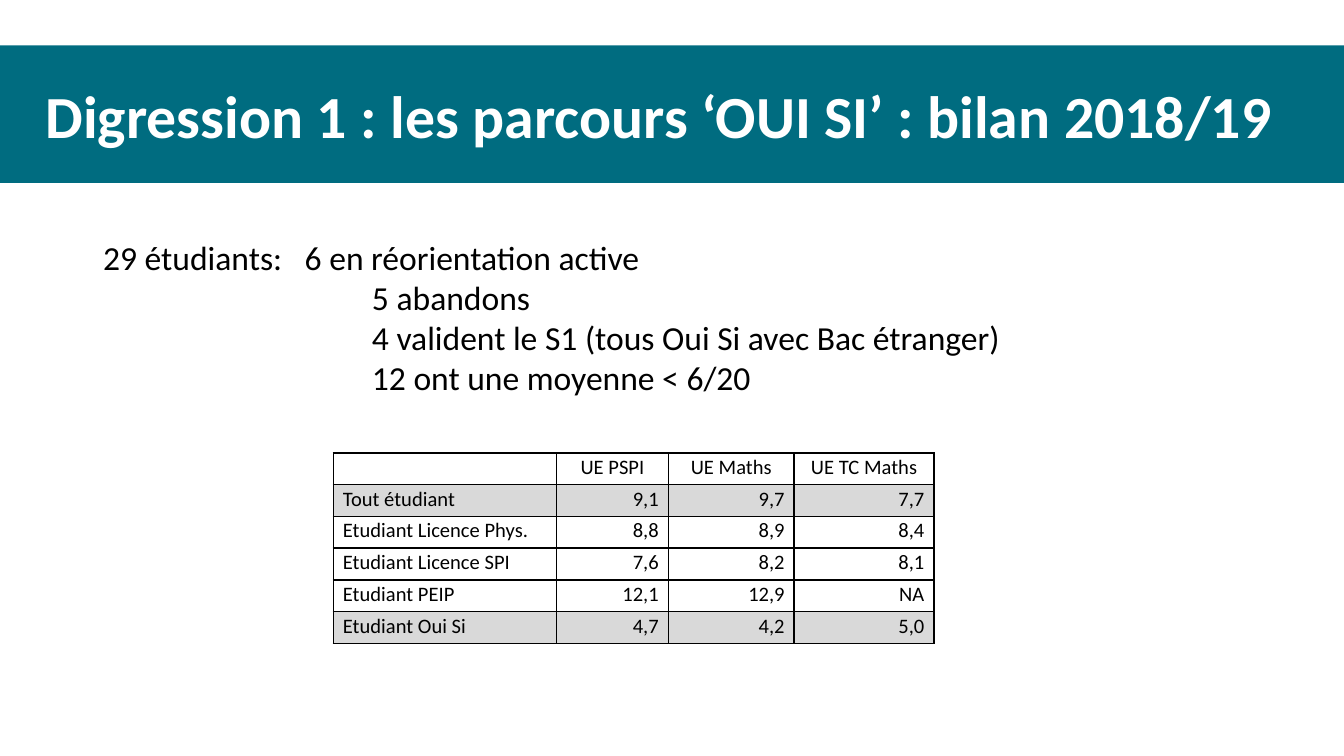
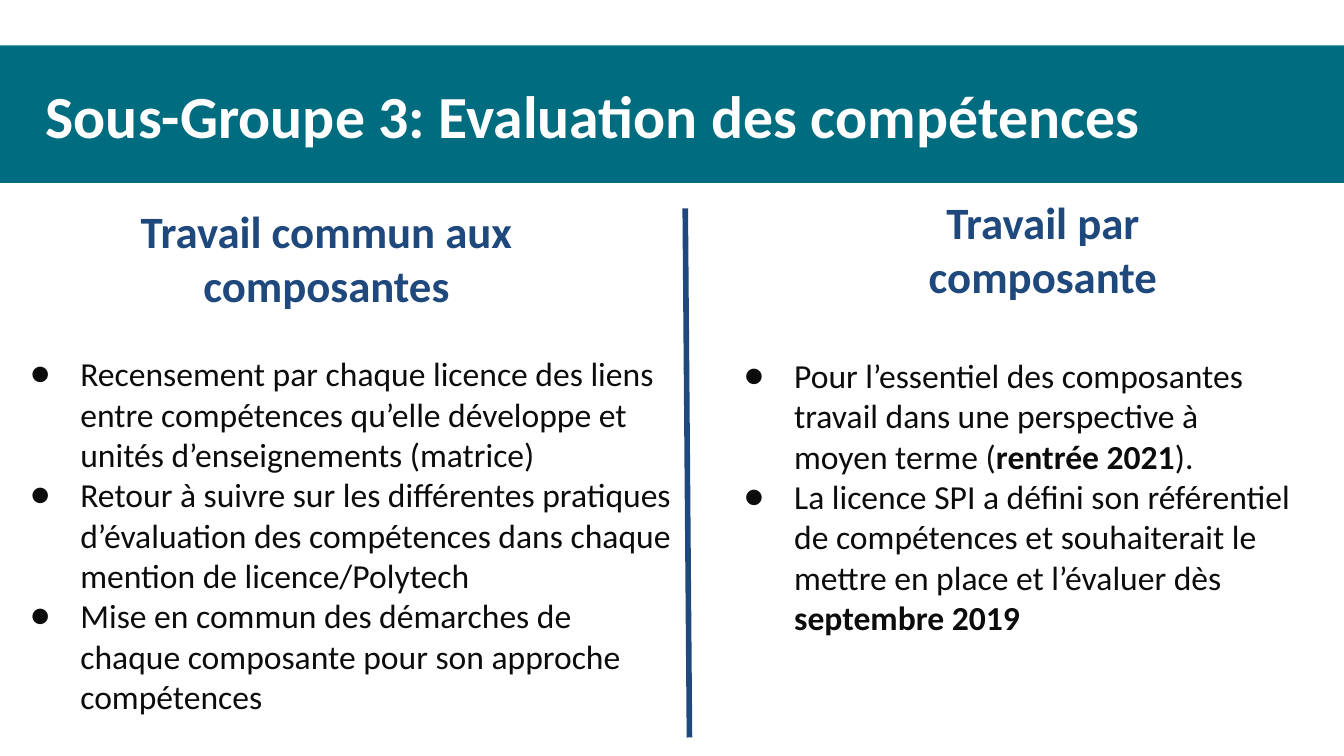
from lxml import etree
from pptx import Presentation
from pptx.dml.color import RGBColor
from pptx.enum.shapes import MSO_CONNECTOR
from pptx.enum.text import MSO_ANCHOR, MSO_AUTO_SIZE, PP_ALIGN
from pptx.oxml.ns import qn
from pptx.util import Cm, Pt

LEFT, CENTER, RIGHT, JUSTIFY = PP_ALIGN.LEFT, PP_ALIGN.CENTER, PP_ALIGN.RIGHT, PP_ALIGN.JUSTIFY
MIDDLE, TOP = MSO_ANCHOR.MIDDLE, MSO_ANCHOR.TOP
NO_AUTOFIT = MSO_AUTO_SIZE.NONE
STRAIGHT = MSO_CONNECTOR.STRAIGHT

FONT = "Calibri"
COLORS = {
    "band": "006C80",
    "white": "FFFFFF",
    "black": "000000",
    "body": "0C0C0C",
    "heading": "1F497D",
    "shade": "D9D9D9",
}
TITLE_ONLY = 5
SLIDE_W, SLIDE_H = 25.4, 14.29


def rgb(name):
    return RGBColor.from_string(COLORS[name])


def add_xml(parent, tag, **attributes):
    return etree.SubElement(parent, qn(tag), **attributes)


def write(paragraph, text, size=18, color="black", bold=False, align=LEFT,
          spacing=None, margin=0, indent=0, bullet=None, tab=None):
    """Fill a paragraph; parts between ** marks are bold."""
    paragraph.alignment = align
    if spacing:
        paragraph.line_spacing = spacing
    properties = paragraph._p.get_or_add_pPr()
    properties.set("marL", str(Cm(margin)))
    properties.set("indent", str(Cm(indent)))
    if bullet:
        add_xml(add_xml(properties, "a:buClr"), "a:srgbClr", val=COLORS[color])
        add_xml(properties, "a:buFont", typeface=FONT)
        add_xml(properties, "a:buChar", char=bullet)
    else:
        add_xml(properties, "a:buNone")
    if tab:
        add_xml(add_xml(properties, "a:tabLst"), "a:tab", pos=str(Cm(tab)), algn="l")
    if not text:
        add_xml(paragraph._p, "a:endParaRPr", sz=str(size * 100))
        return
    for i, part in enumerate(text.split("**")):
        if part:
            run = paragraph.add_run()
            run.text = part
            run.font.name, run.font.size = FONT, Pt(size)
            run.font.bold = bold or i % 2 == 1
            run.font.color.rgb = rgb(color)


def add_text_frame(slide, left, top, width, height, inset=0.13):
    frame = slide.shapes.add_textbox(Cm(left), Cm(top), Cm(width), Cm(height)).text_frame
    frame.word_wrap = True
    frame.vertical_anchor = TOP
    frame.margin_left = frame.margin_right = Cm(0.25)
    frame.margin_top = frame.margin_bottom = Cm(inset)
    return frame


def write_lines(frame, lines, **style):
    for i, line in enumerate(lines):
        paragraph = frame.add_paragraph() if i else frame.paragraphs[0]
        write(paragraph, line, **style)


def add_titled_slide(prs, text):
    slide = prs.slides.add_slide(prs.slide_layouts[TITLE_ONLY])
    # Title band across the slide
    band = slide.shapes.title
    band.left, band.top, band.width, band.height = Cm(0), Cm(0.86), Cm(SLIDE_W), Cm(2.6)
    band.fill.solid()
    band.fill.fore_color.rgb = rgb("band")
    frame = band.text_frame
    frame.auto_size = NO_AUTOFIT
    frame.word_wrap = True
    frame.vertical_anchor = MIDDLE
    write(frame.paragraphs[0], text, size=32, color="white", bold=True,
          align=JUSTIFY, margin=0.61)
    return slide


def add_outcomes(slide, left, top, width, height, label, outcomes):
    frame = add_text_frame(slide, left, top, width, height)
    outcome_left = 5.08
    write(frame.paragraphs[0], f"{label}\t{outcomes[0]}", tab=outcome_left)
    for outcome in outcomes[1:]:
        write(frame.add_paragraph(), outcome, margin=outcome_left)


def format_cell(cell, fill):
    cell.margin_left = cell.margin_right = Cm(0.18)
    cell.margin_top = cell.margin_bottom = 0
    properties = cell._tc.get_or_add_tcPr()
    for side in ("a:lnL", "a:lnR", "a:lnT", "a:lnB"):
        border = add_xml(properties, side, w=str(Pt(1)))
        add_xml(add_xml(border, "a:solidFill"), "a:srgbClr", val=COLORS["black"])
    cell.fill.solid()
    cell.fill.fore_color.rgb = rgb(fill)


def add_grades(slide, left, top, widths, row_height, rows, shaded_rows):
    table = slide.shapes.add_table(
        len(rows), len(widths), Cm(left), Cm(top),
        Cm(sum(widths)), Cm(row_height * len(rows))).table
    table.first_row = table.horz_banding = False
    for column, width in zip(table.columns, widths):
        column.width = Cm(width)
    for r, grades in enumerate(rows):
        table.rows[r].height = Cm(row_height)
        for c, grade in enumerate(grades):
            cell = table.cell(r, c)
            format_cell(cell, "shade" if r in shaded_rows else "white")
            align = CENTER if r == 0 else RIGHT if c else LEFT
            write(cell.text_frame.paragraphs[0], grade, size=11, align=align, spacing=1.07)


def add_work_column(slide, left, top, width, height, heading, heading_left,
                    heading_width, tasks_top, tasks):
    # Heading
    frame = add_text_frame(slide, left + heading_left, top, heading_width, 2.74, inset=0.25)
    write(frame.paragraphs[0], heading, size=24, color="heading", bold=True, align=CENTER)
    # Bulleted tasks
    frame = add_text_frame(slide, left, top + tasks_top, width, height - tasks_top)
    write_lines(frame, tasks, color="body", margin=1.27, indent=-0.95, bullet="●")


def add_divider(slide, x1, y1, x2, y2):
    divider = slide.shapes.add_connector(STRAIGHT, Cm(x1), Cm(y1), Cm(x2), Cm(y2))
    divider.line.color.rgb = rgb("heading")
    divider.line.width = Pt(3)
    add_xml(divider._element.spPr, "a:effectLst")


def build_results(prs):
    slide = add_titled_slide(prs, "Digression 1 : les parcours ‘OUI SI’ : bilan 2018/19")
    add_outcomes(slide, 1.7, 4.34, 17.65, 3.33, "29 étudiants:", [
        "6 en réorientation active",
        "5 abandons",
        "4 valident le S1 (tous Oui Si avec Bac étranger)",
        "12 ont une moyenne < 6/20",
    ])
    add_grades(slide, 6.3, 8.56, [4.22, 2.11, 2.38, 2.64], 0.6, [
        ["", "UE PSPI", "UE Maths", "UE TC Maths"],
        ["Tout étudiant", "9,1", "9,7", "7,7"],
        ["Etudiant Licence Phys.", "8,8", "8,9", "8,4"],
        ["Etudiant Licence SPI", "7,6", "8,2", "8,1"],
        ["Etudiant PEIP", "12,1", "12,9", "NA"],
        ["Etudiant Oui Si", "4,7", "4,2", "5,0"],
    ], shaded_rows=(1, 5))


def build_skills(prs):
    slide = add_titled_slide(prs, "Sous-Groupe 3: Evaluation des compétences")
    add_work_column(
        slide, 0, 3.6, 12.95, 10.34, "Travail commun aux composantes",
        heading_left=2.18, heading_width=7.98, tasks_top=2.95, tasks=[
            "Recensement par chaque licence des liens entre compétences qu’elle "
            "développe et unités d’enseignements (matrice)",
            "Retour à suivre sur les différentes pratiques d’évaluation des "
            "compétences dans chaque mention de licence/Polytech",
            "Mise en commun des démarches de chaque composante pour son approche "
            "compétences",
        ])
    add_work_column(
        slide, 13.49, 3.43, 11.3, 9.91, "Travail par composante",
        heading_left=3.02, heading_width=6.4, tasks_top=3.15, tasks=[
            "Pour l’essentiel des composantes travail dans une perspective à moyen "
            "terme (**rentrée 2021**).",
            "La licence SPI a défini son référentiel de compétences et souhaiterait "
            "le mettre en place et l’évaluer dès **septembre 2019**",
        ])
    add_divider(slide, 12.95, 3.94, 13.03, 13.94)


def main():
    prs = Presentation()
    prs.slide_width, prs.slide_height = Cm(SLIDE_W), Cm(SLIDE_H)
    build_results(prs)
    build_skills(prs)
    prs.save("out.pptx")


if __name__ == "__main__":
    main()
